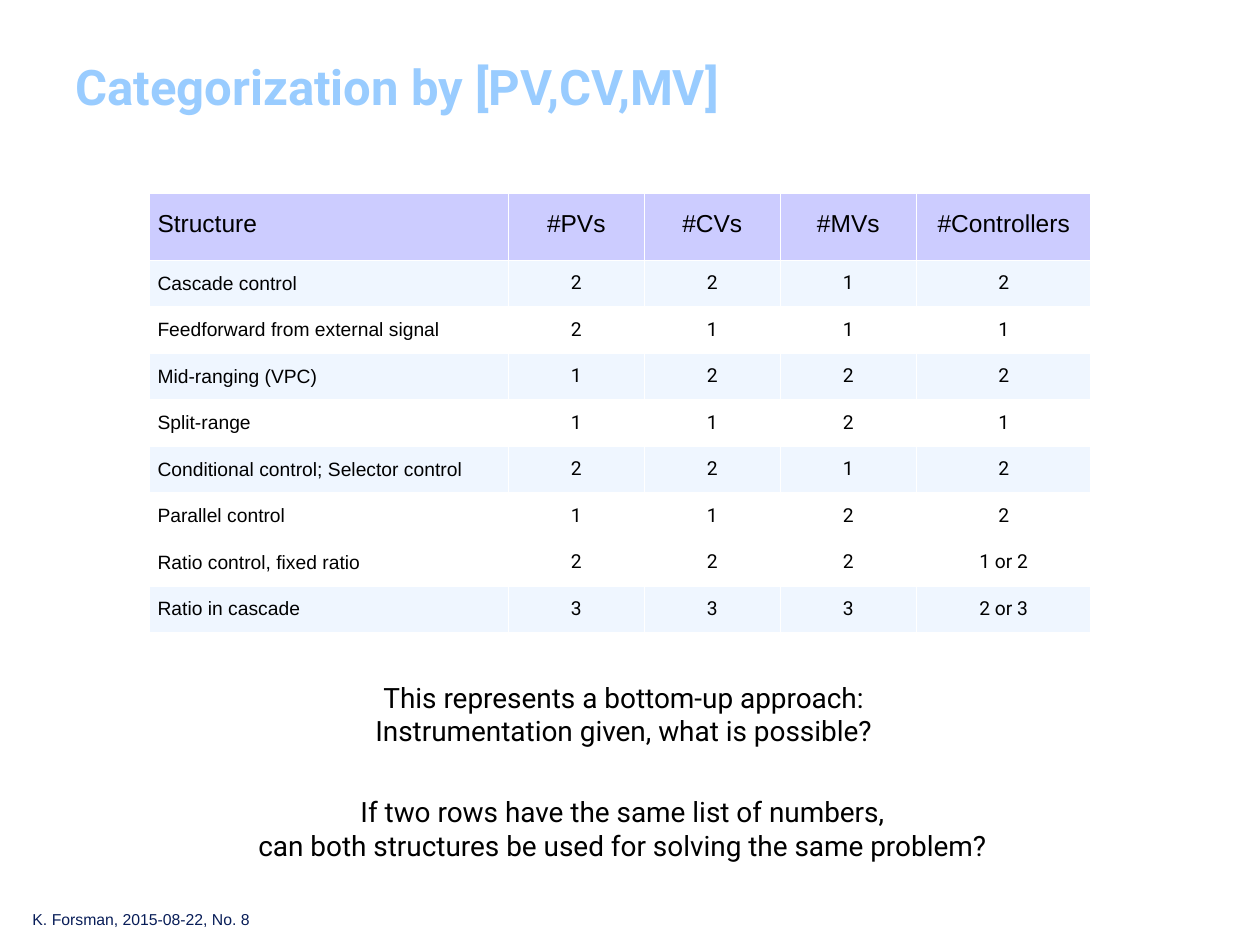
from lxml.etree import SubElement
from pptx import Presentation
from pptx.dml.color import RGBColor
from pptx.enum.text import MSO_ANCHOR, PP_ALIGN
from pptx.oxml.ns import qn
from pptx.util import Pt

HEADER = ["Structure", "#PVs", "#CVs", "#MVs", "#Controllers"]
STRUCTURES = [
    ["Cascade control", "2", "2", "1", "2"],
    ["Feedforward from external signal", "2", "1", "1", "1"],
    ["Mid-ranging (VPC)", "1", "2", "2", "2"],
    ["Split-range", "1", "1", "2", "1"],
    ["Conditional control; Selector control", "2", "2", "1", "2"],
    ["Parallel control", "1", "1", "2", "2"],
    ["Ratio control, fixed ratio", "2", "2", "2", "1 or 2"],
    ["Ratio in cascade", "3", "3", "3", "2 or 3"],
]
SHADED_ROWS = {1, 3, 5, 8}
COLUMN_WIDTHS = [205.5, 77.7, 77.7, 77.7, 100]
HEADER_HEIGHT, ROW_HEIGHT = 38.3, 26.6


def color(value):
    return RGBColor.from_string(value)


def style(paragraph, size, font, fill, bold=False, align=PP_ALIGN.LEFT):
    paragraph.alignment = align
    paragraph.font.size = Pt(size)
    paragraph.font.name = font
    paragraph.font.bold = bold
    paragraph.font.color.rgb = color(fill)


def add_text(slide, box, lines, size, font, fill, bold=False,
             align=PP_ALIGN.LEFT, anchor=MSO_ANCHOR.TOP, wrap=False):
    shape = slide.shapes.add_textbox(*map(Pt, box))
    frame = shape.text_frame
    frame.word_wrap = wrap
    frame.vertical_anchor = anchor
    frame.text = "\n".join(lines)
    for paragraph in frame.paragraphs:
        style(paragraph, size, font, fill, bold, align)


def add_borders(cell, value, width):
    properties = cell._tc.get_or_add_tcPr()
    for side in ("a:lnL", "a:lnR", "a:lnT", "a:lnB"):
        line = SubElement(properties, qn(side), w=str(Pt(width)))
        fill = SubElement(line, qn("a:solidFill"))
        SubElement(fill, qn("a:srgbClr"), val=value)


def fill_cell(cell, text, fill, size, font, align):
    add_borders(cell, "FFFFFF", 1)
    cell.fill.solid()
    cell.fill.fore_color.rgb = color(fill)
    cell.vertical_anchor = MSO_ANCHOR.MIDDLE
    cell.margin_left = cell.margin_right = Pt(5)
    cell.margin_top = cell.margin_bottom = Pt(0)
    cell.text = text
    paragraph = cell.text_frame.paragraphs[0]
    paragraph.line_spacing = Pt(12)
    style(paragraph, size, font, "000000", align=align)


def add_structure_table(slide, left, top):
    rows = [HEADER] + STRUCTURES
    heights = [HEADER_HEIGHT] + [ROW_HEIGHT] * len(STRUCTURES)
    frame = slide.shapes.add_table(len(rows), len(HEADER), Pt(left), Pt(top),
                                   Pt(sum(COLUMN_WIDTHS)), Pt(sum(heights)))
    table = frame.table
    for column, width in zip(table.columns, COLUMN_WIDTHS):
        column.width = Pt(width)
    for row, height in zip(table.rows, heights):
        row.height = Pt(height)

    for row_index, row in enumerate(rows):
        is_header = row_index == 0
        band = "EFF6FF" if row_index in SHADED_ROWS else "FFFFFF"
        for column_index, text in enumerate(row):
            is_name = column_index == 0
            fill_cell(table.cell(row_index, column_index), text,
                      "CCCCFF" if is_header else band,
                      14 if is_header else 11,
                      "Arial" if is_header or is_name else "Roboto",
                      PP_ALIGN.JUSTIFY if is_name else PP_ALIGN.CENTER)


def main():
    presentation = Presentation()
    presentation.slide_width = Pt(720)
    presentation.slide_height = Pt(540)
    slide = presentation.slides.add_slide(presentation.slide_layouts[6])

    # Title
    add_text(slide, (36, 21.6, 641.5, 55.4), ["Categorization by [PV,CV,MV]"],
             28, "Roboto", "99CCFF", bold=True, anchor=MSO_ANCHOR.MIDDLE,
             wrap=True)

    # Control structures and their variable counts
    add_structure_table(slide, 85, 110.5)

    # Remarks below the table
    add_text(slide, (205.2, 385.2, 302.4, 46),
             ["This represents a bottom-up approach:",
              "Instrumentation given, what is possible?"],
             16, "Roboto", "000000", align=PP_ALIGN.CENTER)
    add_text(slide, (131.8, 450.7, 447.8, 46),
             ["If two rows have the same list of numbers,",
              "can both structures be used for solving the same problem?"],
             16, "Roboto", "000000", align=PP_ALIGN.CENTER)

    # Footer
    add_text(slide, (11.5, 516.2, 146.2, 18), ["K. Forsman, 2015-08-22, No. 8"],
             9, "Arial", "081D58")

    presentation.save("out.pptx")


if __name__ == "__main__":
    main()
